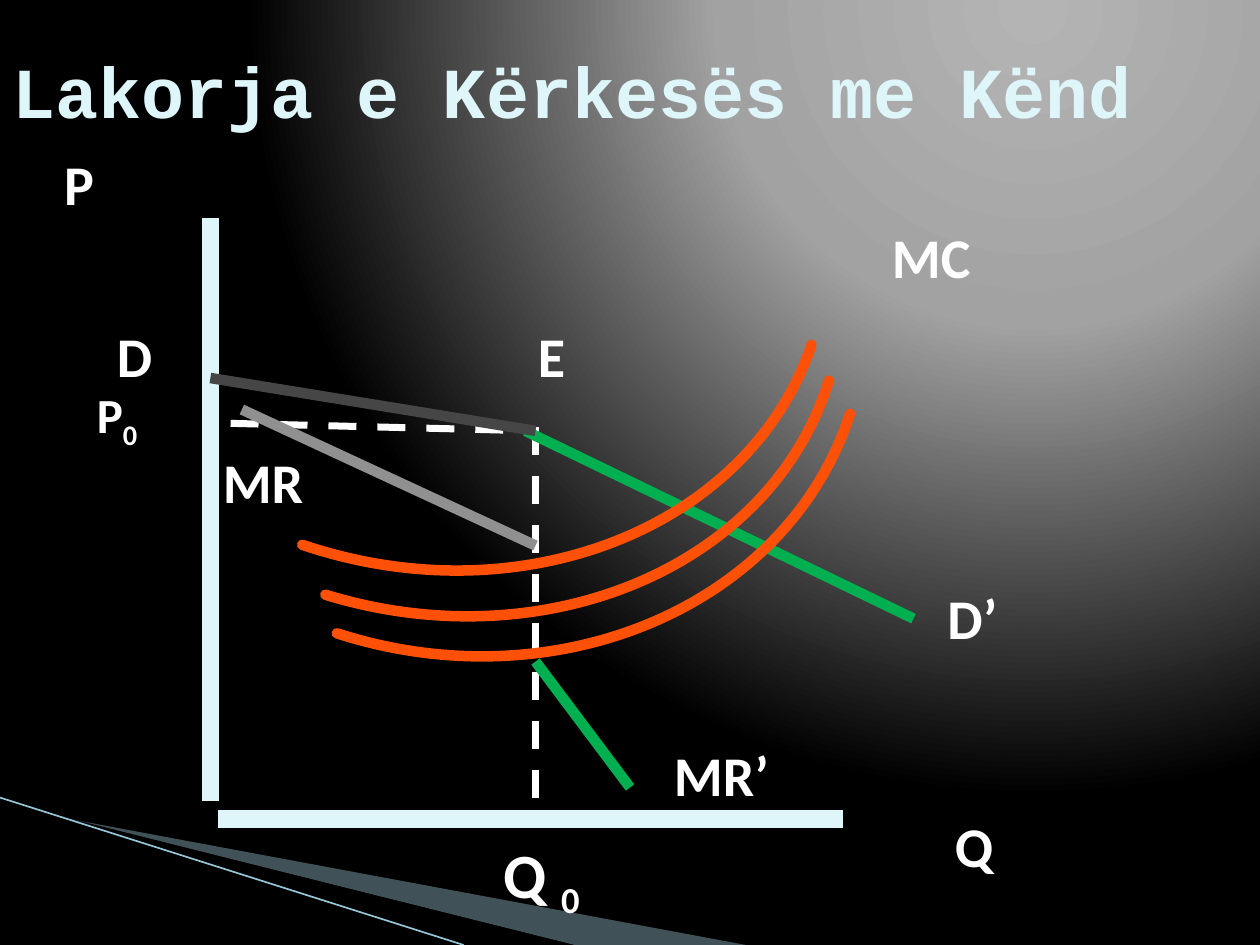
from lxml import etree
from pptx import Presentation
from pptx.dml.color import RGBColor
from pptx.enum.dml import MSO_LINE
from pptx.enum.shapes import MSO_CONNECTOR
from pptx.enum.text import MSO_ANCHOR, MSO_AUTO_SIZE, PP_ALIGN
from pptx.oxml import parse_xml
from pptx.oxml.ns import nsdecls, qn
from pptx.util import Inches, Pt

STRAIGHT = MSO_CONNECTOR.STRAIGHT
DASH = MSO_LINE.DASH
MIDDLE = MSO_ANCHOR.MIDDLE
LEFT = PP_ALIGN.LEFT
NO_FIT, GROW = MSO_AUTO_SIZE.NONE, MSO_AUTO_SIZE.SHAPE_TO_FIT_TEXT
TITLE_ONLY = 5
QUARTER_ARC = 0.55  # Bezier handle length of a quarter ellipse

WHITE = RGBColor(0xFF, 0xFF, 0xFF)
BLACK = RGBColor(0x00, 0x00, 0x00)
ICE = RGBColor(0xDE, 0xF5, 0xFA)
WEDGE_BLUE = RGBColor(0xA0, 0xCB, 0xDC)
EDGE_BLUE = RGBColor(0x97, 0xC5, 0xD8)
GREEN = RGBColor(0x00, 0xB0, 0x50)
DARK_GRAY = RGBColor(0x46, 0x46, 0x46)
LIGHT_GRAY = RGBColor(0x90, 0x90, 0x90)
ORANGE = RGBColor(0xFF, 0x50, 0x08)

GLOW_STOPS = [(0, "B4B4B4"), (40, "A2A2A2"), (100, "000000")]

# Start, end, colour, width, dash
GUIDES = [
    ((1.83, 3.36), (4.25, 3.42), WHITE, 4, DASH),
    ((4.25, 3.39), (4.25, 6.44), WHITE, 4, DASH),
]
AXES_AND_CURVES = [
    ((1.67, 1.73), (1.67, 6.36), ICE, 10, None),
    ((1.73, 6.5), (6.69, 6.5), ICE, 10, None),
    ((4.17, 3.42), (7.25, 4.91), GREEN, 6, None),
    ((1.67, 3), (4.25, 3.42), DARK_GRAY, 6, None),
    ((1.92, 3.25), (4.25, 4.33), LIGHT_GRAY, 6, None),
    ((4.25, 5.25), (5, 6.25), GREEN, 6, None),
]
# Left, top, width, height, rotation
MARGINAL_COSTS = [
    (2.92, 2.47, 3.32, 2.8, 17.1),
    (2.76, 2.13, 3.32, 2.8, 18.7),
    (3.04, 2.7, 3.34, 2.91, 17.9),
]
# Text, subscript, place and size, font size
LABELS = [
    ("Q", "", (7.48, 6.39, 0.54, 0.63), 32),
    ("MC", "", (6.98, 1.72, 0.89, 0.63), 32),
    ("Q ", "0", (3.9, 6.58, 0.92, 0.7), 36),
    ("P", "", (0.41, 1.14, 0.49, 0.63), 32),
    ("P", "0", (0.67, 3, 0.61, 0.57), 28),
    ("E", "", (4.17, 2.5, 0.5, 0.64), 32),
    ("D", "", (0.83, 2.5, 0.52, 0.63), 32),
    ("D’", "", (7.42, 4.58, 0.65, 0.64), 32),
    ("MR", "", (1.67, 3.5, 0.9, 0.64), 32),
    ("MR’", "", (5.25, 5.83, 1.02, 0.64), 32),
]


def paint_background(page):
    """Radial glow from the upper right corner."""
    page.background.fill.gradient()
    default = page.element.xpath(".//p:bgPr/a:gradFill")[0]
    stops = "".join(
        f'<a:gs pos="{percent * 1000}"><a:srgbClr val="{color}"/></a:gs>'
        for percent, color in GLOW_STOPS)
    glow = parse_xml(
        f'<a:gradFill {nsdecls("a")} rotWithShape="1"><a:gsLst>{stops}</a:gsLst>'
        '<a:path path="circle"><a:fillToRect l="65000" t="0" r="0" b="98000"/>'
        '</a:path></a:gradFill>')
    default.getparent().replace(default, glow)


def add_line(page, start, end, color, width, dash=None):
    line = page.shapes.add_connector(
        STRAIGHT, *(Inches(value) for value in (*start, *end)))
    line.line.color.rgb = color
    line.line.width = Pt(width)
    if dash is not None:
        line.line.dash_style = dash
    etree.SubElement(line.element.spPr, qn("a:effectLst"))


def add_outline(page, points, close):
    corners = [(Inches(x), Inches(y)) for x, y in points]
    builder = page.shapes.build_freeform(*corners[0])
    builder.add_line_segments(corners[1:], close=close)
    shape = builder.convert_to_shape()
    shape.shadow.inherit = False
    return shape


def add_wedge(page, points, color, opacity=100):
    wedge = add_outline(page, points, close=True)
    wedge.fill.solid()
    wedge.fill.fore_color.rgb = color
    wedge.line.fill.background()
    if opacity < 100:
        tint = wedge.element.spPr.find(qn("a:solidFill"))[0]
        etree.SubElement(tint, qn("a:alpha"), val=str(opacity * 1000))


def add_arc(page, left, top, width, height, rotation, color, weight):
    """Quarter ellipse from the top right to the bottom left corner."""
    right, bottom = left + width, top + height
    arc = add_outline(page, [
        (right, top),
        (right, top + QUARTER_ARC * height),
        (left + QUARTER_ARC * width, bottom),
        (left, bottom),
    ], close=False)
    segments = arc.element.xpath(".//a:lnTo")
    bezier = etree.SubElement(segments[0].getparent(), qn("a:cubicBezTo"))
    for segment in segments:
        bezier.append(segment[0])
        segment.getparent().remove(segment)
    arc.rotation = rotation
    arc.fill.background()
    arc.line.color.rgb = color
    arc.line.width = Pt(weight)
    arc.element.spPr.find(qn("a:ln")).set("cap", "rnd")


def add_span(para, text, *, size, font="Calibri", color=WHITE, baseline=0):
    span = para.add_run()
    span.text = text
    span.font.size = Pt(size)
    span.font.name = font
    span.font.bold = True
    span.font.color.rgb = color
    if baseline:
        span.font._element.set("baseline", str(baseline * 1000))


def add_label(page, text, subscript, place, size):
    box = page.shapes.add_textbox(*(Inches(value) for value in place))
    box.text_frame.word_wrap = False
    box.text_frame.auto_size = GROW
    para = box.text_frame.paragraphs[0]
    add_span(para, text, size=size)
    if subscript:
        add_span(para, subscript, size=size, baseline=-25)


def set_title(page, text):
    title = page.shapes.title
    title.left, title.top = Inches(0), Inches(0.25)
    title.width, title.height = Inches(9.83), Inches(0.92)
    frame = title.text_frame
    frame.auto_size = NO_FIT
    frame.vertical_anchor = MIDDLE
    para = frame.paragraphs[0]
    para.alignment = LEFT
    add_span(para, text, size=41, font="Courier New", color=ICE)


def main():
    deck = Presentation()
    deck.slide_width, deck.slide_height = Inches(10), Inches(7.5)
    page = deck.slides.add_slide(deck.slide_layouts[TITLE_ONLY])
    paint_background(page)
    add_wedge(page, [(0.55, 6.5), (5.92, 7.5), (4.56, 7.5)], WEDGE_BLUE, opacity=40)
    add_wedge(page, [(0.53, 6.49), (4.55, 7.5), (3.69, 7.5)], BLACK)
    add_line(page, (0, 6.33), (3.68, 7.5), EDGE_BLUE, 0.95)
    for guide in GUIDES:
        add_line(page, *guide)
    set_title(page, "Lakorja e Kërkesës me Kënd")
    for line in AXES_AND_CURVES:
        add_line(page, *line)
    for label in LABELS:
        add_label(page, *label)
    for arc in MARGINAL_COSTS:
        add_arc(page, *arc, color=ORANGE, weight=6)
    deck.save("out.pptx")


if __name__ == "__main__":
    main()
